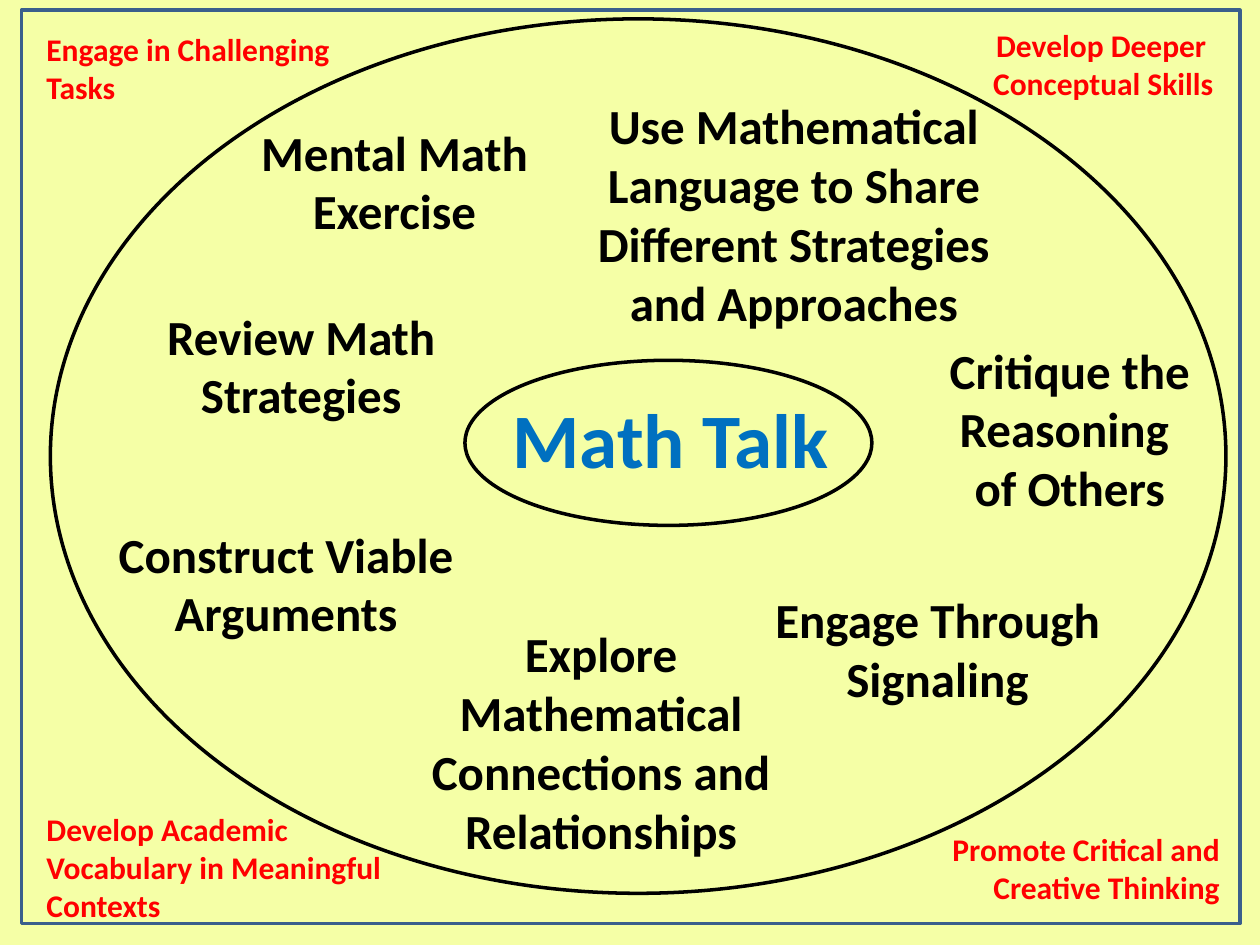
from pptx import Presentation
from pptx import util as u
from pptx.dml.color import RGBColor
from pptx.enum import shapes, text

CREAM = RGBColor(0xF5, 0xFF, 0xA6)
NAVY = RGBColor(0x3A, 0x5F, 0x8C)
BLACK = RGBColor(0, 0, 0)
BLUE = RGBColor(0, 0x70, 0xC0)
RED = RGBColor(0xFF, 0, 0)
FONT = "Calibri"
WIDTH, HEIGHT = u.Inches(10), u.Inches(7.5)
LEFT, CENTER, RIGHT = text.PP_ALIGN.LEFT, text.PP_ALIGN.CENTER, text.PP_ALIGN.RIGHT

# Boxes are left, top, width, height in percent of the slide.
FRAME = (1.7, 1.07, 96.7, 96.67)
OUTER_RING = (4, 2, 93.3, 92.53)
INNER_RING = (36.9, 38.13, 32.3, 17.47)
TITLE = (39.7, 40.8, 27.4, 11.2)

# Practices: left and top in percent, number of lines shown, paragraphs.
PRACTICE_WIDTH = 35
PRACTICES = [
    (13.8, 12.27, 2, ["Mental Math", "Exercise"]),
    (45.5, 9.47, 4, ["Use Mathematical Language to Share Different Strategies and Approaches"]),
    (67.4, 35.33, 3, ["Critique the Reasoning ", "of Others"]),
    (56.9, 61.73, 2, ["Engage Through Signaling"]),
    (30.2, 65.33, 4, ["Explore Mathematical Connections and Relationships"]),
    (5.2, 54.8, 2, ["Construct Viable Arguments"]),
    (6.4, 31.73, 2, ["Review Math Strategies"]),
]

GOALS = [
    ((2.7, 2.53, 25, 9.47), LEFT, ["Engage in Challenging", "Tasks"]),
    ((77.6, 2.13, 19.7, 9.47), RIGHT, ["Develop Deeper ", "Conceptual Skills"]),
    ((2.7, 85.07, 28.8, 13.47), LEFT,
     ["Develop Academic", "Vocabulary in Meaningful", "Contexts"]),
    ((74.3, 87.2, 23.5, 9.47), RIGHT, ["Promote Critical and", "Creative Thinking"]),
]


def place(box):
    left, top, width, height = box
    return (int(WIDTH * left / 100), int(HEIGHT * top / 100),
            int(WIDTH * width / 100), int(HEIGHT * height / 100))


def add_outline(page, kind, box, color):
    outline = page.shapes.add_shape(kind, *place(box))
    outline.shadow.inherit = False
    outline.fill.background()
    outline.line.color.rgb = color
    outline.line.width = u.Pt(2)


def add_label(page, box, lines, size, color, align=LEFT, wrap=False):
    frame = page.shapes.add_textbox(*place(box)).text_frame
    frame.word_wrap = wrap
    frame.auto_size = text.MSO_AUTO_SIZE.SHAPE_TO_FIT_TEXT
    frame.text = "\n".join(lines)
    for para in frame.paragraphs:
        para.alignment = align
        para.font.name = FONT
        para.font.size = u.Pt(size)
        para.font.bold = True
        para.font.color.rgb = color


def add_center(page, title_box, ring_box):
    add_label(page, title_box, ["Math Talk"], 44, BLUE)
    add_outline(page, shapes.MSO_SHAPE.OVAL, ring_box, BLACK)


def add_practices(page, ring_box):
    add_outline(page, shapes.MSO_SHAPE.OVAL, ring_box, BLACK)
    for left, top, line_count, lines in PRACTICES:
        # The first practice sits in a narrower box.
        width = 29.2 if left == 13.8 else PRACTICE_WIDTH
        if left == 13.8:
            left = 16.7
        height = 1.2 + 6.33 * line_count
        add_label(page, (left, top, width, height), lines, 28, BLACK, CENTER, wrap=True)


def add_goals(page, frame_box):
    """Frame the slide and put a goal in each corner."""
    add_outline(page, shapes.MSO_SHAPE.RECTANGLE, frame_box, NAVY)
    for box, align, lines in GOALS:
        add_label(page, box, lines, 18, RED, align)


def main():
    deck = Presentation()
    deck.slide_width, deck.slide_height = WIDTH, HEIGHT
    page = deck.slides.add_slide(deck.slide_layouts[6])
    page.background.fill.solid()
    page.background.fill.fore_color.rgb = CREAM
    add_goals(page, FRAME)
    add_practices(page, OUTER_RING)
    add_center(page, TITLE, INNER_RING)
    deck.save("out.pptx")


if __name__ == "__main__":
    main()
